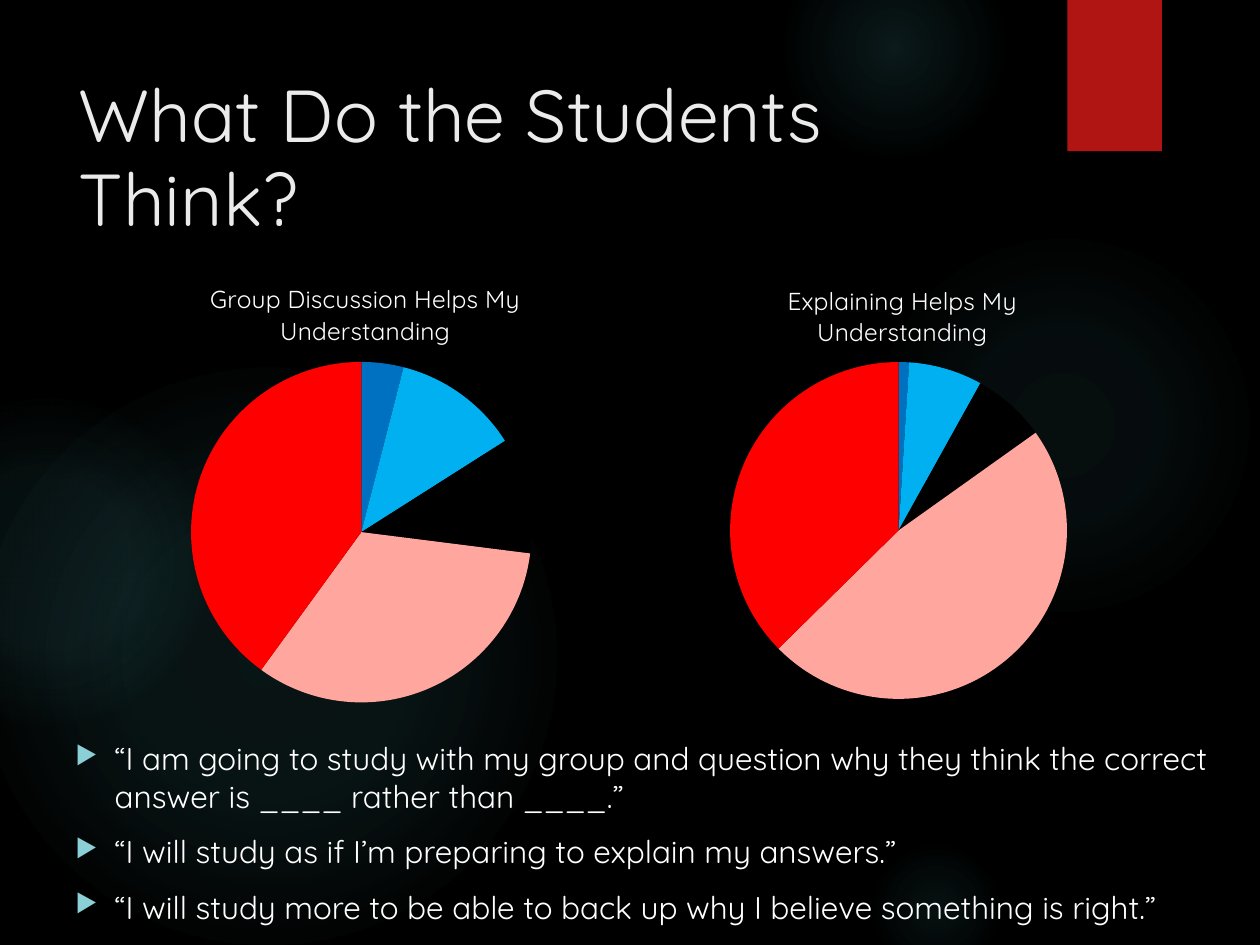
from lxml import etree
from pptx import Presentation
from pptx.chart.data import CategoryChartData
from pptx.dml.color import RGBColor
from pptx.enum.chart import XL_CHART_TYPE
from pptx.enum.shapes import MSO_SHAPE
from pptx.enum.text import MSO_ANCHOR
from pptx.oxml import parse_xml
from pptx.oxml.ns import nsdecls, qn
from pptx.util import Pt

PIE = XL_CHART_TYPE.PIE
OVAL, RECTANGLE = MSO_SHAPE.OVAL, MSO_SHAPE.RECTANGLE
TOP, MIDDLE = MSO_ANCHOR.TOP, MSO_ANCHOR.MIDDLE

FONT = "Quicksand"
GLOW, WHITE = "50B9C1", "FFFFFF"
SLICE_COLOURS = ["0070C0", "00B0F0", "000000", "FFA69F", "FF0000"]
GLOWS = [
    (496, 132, 222, [(0, 7), (36, 6), (69, 0)]),
    (448, -36, 126, [(0, 14), (36, 7), (73, 0)]),
    (496, 480, 78, [(0, 9), (36, 5), (66, 0)]),
    (-12, 210, 330, [(0, 11), (36, 10), (75, 0)]),
    (-66, 228, 186, [(0, 8), (36, 8), (72, 0)]),
]
QUOTES = [
    "“I am going to study with my group and question why they think the correct answer is ____ rather than ____.”",
    "“I will study as if I’m preparing to explain my answers.”",
    "“I will study more to be able to back up why I believe something is right.”",
]
CHARTS = [
    ((67.5, 144.7, 278, 268), "Group Discussion Helps My Understanding", (4, 12, 11, 33, 40), 0.18),
    ((376, 145.5, 275, 265), "Explaining Helps My Understanding", (1, 7, 7, 47, 37), 0.26),
]


def colour(code):
    """Turn a hex string into a colour."""
    return RGBColor.from_string(code)


def style_font(font, size, code):
    """Set the typeface, size and colour of a font."""
    font.name = FONT
    font.size = Pt(size)
    font.color.rgb = colour(code)


def add_plain_shape(page, kind, box):
    """Add a preset shape without line or shadow."""
    shape = page.shapes.add_shape(kind, *map(Pt, box))
    shape.shadow.inherit = False
    shape.line.fill.background()
    return shape


def add_glow(page, box, stops):
    """Add a circle that fades out from its centre."""
    shape = add_plain_shape(page, OVAL, box)
    shape.fill.background()
    stop_xml = "".join(
        f'<a:gs pos="{place * 1000}"><a:srgbClr val="{GLOW}">'
        f'<a:alpha val="{opacity * 1000}"/></a:srgbClr></a:gs>'
        for place, opacity in stops
    )
    gradient = parse_xml(
        f'<a:gradFill {nsdecls("a")} rotWithShape="1"><a:gsLst>{stop_xml}</a:gsLst>'
        '<a:path path="circle"><a:fillToRect l="50000" t="50000" r="50000" b="50000"/>'
        "</a:path></a:gradFill>"
    )
    properties = shape._element.spPr
    properties.replace(properties.find(qn("a:noFill")), gradient)


def add_backdrop(page):
    """Add the black ground, the glows and the red ribbon."""
    page.background.fill.solid()
    page.background.fill.fore_color.rgb = colour("000000")
    for left, top, size, stops in GLOWS:
        add_glow(page, (left, top, size, size), stops)
    ribbon = add_plain_shape(page, RECTANGLE, (610, 0, 54, 86.4))
    ribbon.fill.solid()
    ribbon.fill.fore_color.rgb = colour("B01513")


def add_text_frame(page, box, anchor):
    """Add a wrapping text box and return its frame."""
    frame = page.shapes.add_textbox(*map(Pt, box)).text_frame
    frame.word_wrap = True
    frame.vertical_anchor = anchor
    return frame


def add_heading(page, box, text):
    """Add the slide title."""
    para = add_text_frame(page, box, MIDDLE).paragraphs[0]
    para.line_spacing = 0.95
    span = para.add_run()
    span.text = text
    style_font(span.font, 42, "EBEBEB")


def add_bullet(para):
    """Give a paragraph a hanging triangle bullet."""
    properties = para._p.get_or_add_pPr()
    properties.set("marL", str(Pt(58.5)))
    properties.set("indent", str(Pt(-22.5)))
    bullet_colour = etree.SubElement(properties, qn("a:buClr"))
    etree.SubElement(bullet_colour, qn("a:srgbClr"), val="8AD0D6")
    etree.SubElement(properties, qn("a:buSzPct"), val="80000")
    etree.SubElement(properties, qn("a:buChar"), char="▶")


def add_quotes(page, box, quotes):
    """Add the bulleted student quotes."""
    frame = add_text_frame(page, box, TOP)
    for index, quote in enumerate(quotes):
        para = frame.add_paragraph() if index else frame.paragraphs[0]
        para.space_before = Pt(10)
        add_bullet(para)
        span = para.add_run()
        span.text = quote
        style_font(span.font, 18, WHITE)


def set_layout(element, successor, **places):
    """Fix the position of a chart part in fractions of the chart."""
    for old in element.findall(qn("c:layout")):
        element.remove(old)
    inner = '<c:layoutTarget val="inner"/>' if "w" in places else ""
    modes = "".join(f'<c:{key}Mode val="edge"/>' for key in ("x", "y"))
    values = "".join(f'<c:{key} val="{value}"/>' for key, value in places.items())
    layout = parse_xml(
        f'<c:layout {nsdecls("c")}><c:manualLayout>{inner}{modes}{values}'
        "</c:manualLayout></c:layout>"
    )
    element.find(qn(successor)).addprevious(layout)


def add_pie(page, box, title, values, title_left):
    """Add a titled pie chart with coloured slices."""
    data = CategoryChartData()
    data.categories = ["1", "2", "3", "4", "5"]
    data.add_series("Series 1", values)
    chart = page.shapes.add_chart(PIE, *map(Pt, box), data).chart
    style_font(chart.font, 10, WHITE)
    chart.has_legend = False
    chart.has_title = True
    span = chart.chart_title.text_frame.paragraphs[0].add_run()
    span.text = title
    style_font(span.font, 14, WHITE)
    span.font.bold = False
    chart.chart_title.include_in_layout = False
    set_layout(chart.chart_title._element, "c:overlay", x=title_left, y=0.05)
    plot = chart.plots[0]
    plot.vary_by_categories = True
    set_layout(chart._chartSpace.chart.plotArea, "c:pieChart", x=0.15, y=0.23, w=0.7, h=0.73)
    for index, code in enumerate(SLICE_COLOURS):
        slice_format = plot.series[0].points[index].format
        slice_format.fill.solid()
        slice_format.fill.fore_color.rgb = colour(code)
        slice_format.line.fill.background()


def main():
    """Build the deck and save it."""
    deck = Presentation()
    deck.slide_width, deck.slide_height = Pt(720), Pt(540)
    page = deck.slides.add_slide(deck.slide_layouts[6])
    add_backdrop(page)
    add_heading(page, (38, 36, 556, 110), "What Do the Students Think?")
    add_quotes(page, (0, 419, 720, 114), QUOTES)
    for box, title, values, title_left in CHARTS:
        add_pie(page, box, title, values, title_left)
    deck.save("out.pptx")


if __name__ == "__main__":
    main()
